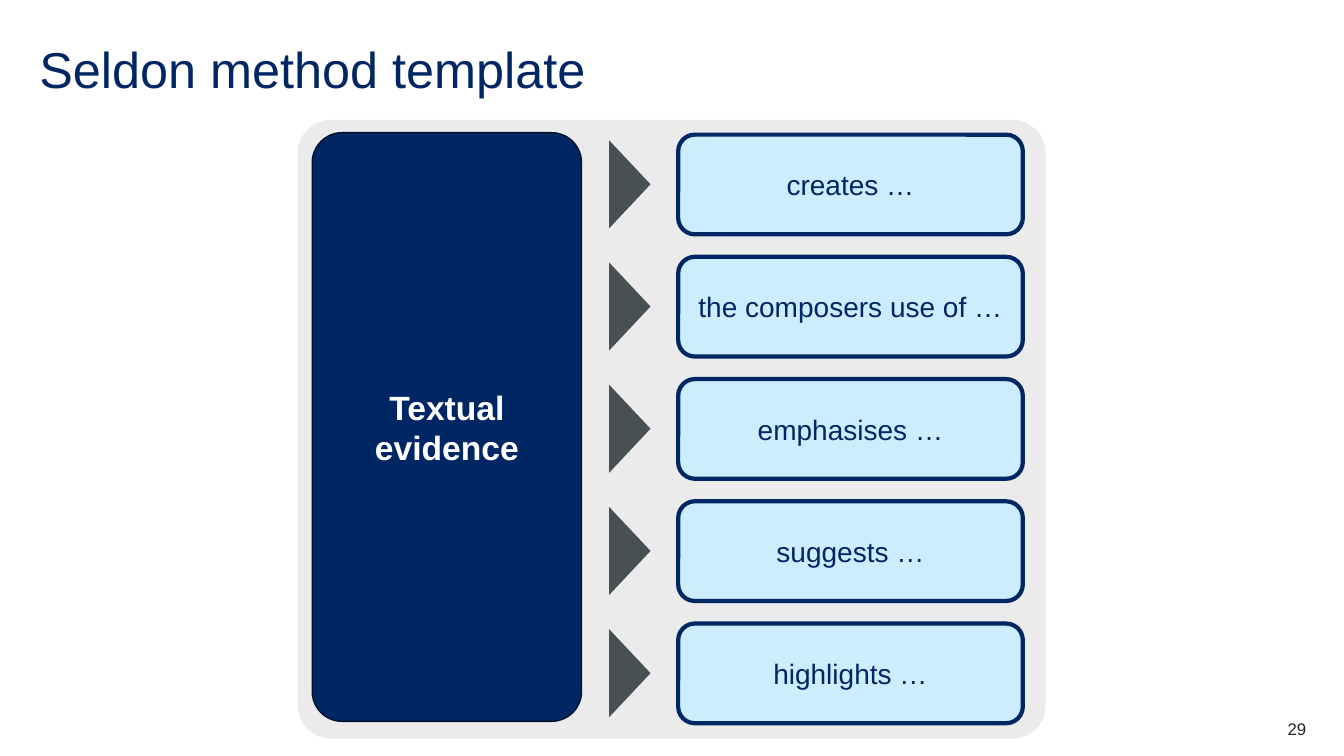
"""Builds the Seldon method template slide."""
import pptx
import pptx.dml.color
import pptx.enum.shapes
import pptx.enum.text
import pptx.util

Pt = pptx.util.Pt
SHAPE = pptx.enum.shapes.MSO_SHAPE
ALIGN = pptx.enum.text.PP_ALIGN
ANCHOR = pptx.enum.text.MSO_ANCHOR

NAVY = "002664"
EFFECTS = ["creates …", "the composers use of …", "emphasises …", "suggests …", "highlights …"]
PITCH = 87.3


def rgb(color):
    return pptx.dml.color.RGBColor.from_string(color)


def set_all(obj, values):
    for name, value in values.items():
        setattr(obj, name, value)


def place(sp, left, top, width, height):
    box = {"left": left, "top": top, "width": width, "height": height}
    set_all(sp, {name: Pt(value) for name, value in box.items()})


def write(tf, lines, size, color, align, bold=False, spacing=None):
    for i, line in enumerate(lines):
        p = tf.paragraphs[0] if i == 0 else tf.add_paragraph()
        set_all(p, {"alignment": align, "line_spacing": spacing})
        r = p.add_run()
        r.text = line
        set_all(r.font, {"name": "Arial", "size": Pt(size), "bold": bold})
        r.font.color.rgb = rgb(color)


def format_frame(tf):
    set_all(tf, {"margin_left": 0, "margin_top": 0, "margin_right": 0, "margin_bottom": 0,
                 "word_wrap": True, "auto_size": pptx.enum.text.MSO_AUTO_SIZE.NONE,
                 "vertical_anchor": ANCHOR.BOTTOM})


def add_title(s, text):
    sp = s.shapes.title
    place(sp, 28.1, 28.1, 904.3, 43.2)
    format_frame(sp.text_frame)
    write(sp.text_frame, [text], 36, NAVY, ALIGN.LEFT, spacing=0.9)


def add_block(s, kind, box, fill, line=None, adj=None):
    sp = s.shapes.add_shape(kind, *map(Pt, box))
    sp.shadow.inherit = False
    sp.fill.solid()
    sp.fill.fore_color.rgb = rgb(fill)
    if line:
        color, width = line
        sp.line.color.rgb = rgb(color)
        sp.line.width = Pt(width)
    else:
        sp.line.fill.background()
    if adj is not None:
        sp.adjustments[0] = adj
    return sp


def add_label(sp, lines, size, color, bold=False):
    set_all(sp.text_frame, {"word_wrap": True, "vertical_anchor": ANCHOR.MIDDLE})
    write(sp.text_frame, lines, size, color, ALIGN.CENTER, bold)


def add_page_number(s, number):
    sp = s.shapes.add_textbox(*map(Pt, (876.2, 513.4, 56.9, 14.4)))
    format_frame(sp.text_frame)
    write(sp.text_frame, [number], 12, "22272B", ALIGN.RIGHT)


def main():
    prs = pptx.Presentation()
    set_all(prs, {"slide_width": Pt(960), "slide_height": Pt(540)})
    s = prs.slides.add_slide(prs.slide_layouts[5])
    add_title(s, "Seldon method template")

    add_block(s, SHAPE.ROUNDED_RECTANGLE, (212.6, 85.6, 534.4, 442), "EBEBEB", adj=0.054)
    evidence = add_block(s, SHAPE.ROUNDED_RECTANGLE, (223, 94.8, 192.4, 420.5), NAVY,
                         ("00112C", 1), 0.111)
    add_label(evidence, ["Textual", "evidence"], 24, "FFFFFF", True)

    for i, effect in enumerate(EFFECTS):
        offset = i * PITCH
        box = add_block(s, SHAPE.ROUNDED_RECTANGLE, (484.4, 96.2 + offset, 246.2, 71.2),
                        "CBEDFD", (NAVY, 3))
        add_label(box, [effect], 20, NAVY)
        arrow = add_block(s, SHAPE.ISOSCELES_TRIANGLE, (418.5, 116.9 + offset, 62.8, 29.5), "495054")
        arrow.rotation = 90

    add_page_number(s, "29")
    prs.save("out.pptx")


if __name__ == "__main__":
    main()
